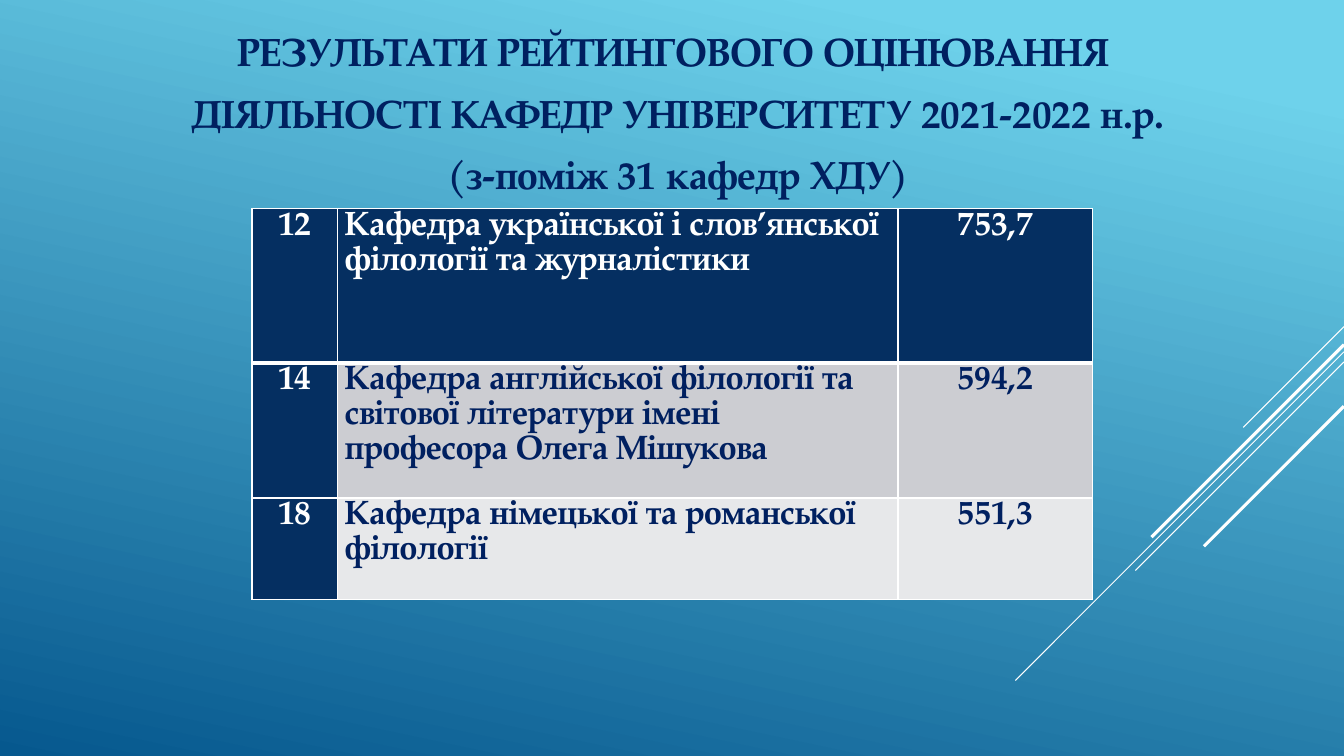
from typing import NamedTuple

from lxml import etree
from pptx import Presentation
from pptx.dml.color import RGBColor
from pptx.enum.shapes import MSO_CONNECTOR as Connector
from pptx.enum.text import PP_ALIGN as Align
from pptx.oxml.ns import qn
from pptx.util import Pt

FONT = "TeX Gyre Pagella"
NAVY, DARK, WHITE = "002060", "052F61", "FFFFFF"
WIDTH, HEIGHT = 960, 540


class Ray(NamedTuple):
    """A 45-degree line running down and left from the right slide edge."""
    y: float
    run: float
    weight: float


class Department(NamedTuple):
    place: str
    name: str
    score: str
    height: float
    fill: str
    color: str


RAYS = [
    Ray(233.3, 72, 0.75),
    Ray(251.3, 234.7, 0.75),
    Ray(258.5, 149, 0.75),
    Ray(246.2, 137.5, 2.25),
    Ray(290.2, 100, 2.25),
]
TITLE = [
    "РЕЗУЛЬТАТИ РЕЙТИНГОВОГО ОЦІНЮВАННЯ ",
    "ДІЯЛЬНОСТІ КАФЕДР УНІВЕРСИТЕТУ 2021-2022 н.р.",
    "(з-поміж 31 кафедр ХДУ)",
]
COLUMNS = [61.2, 400.3, 139]
DEPARTMENTS = [
    Department("12", "Кафедра української і слов’янської філології та журналістики",
               "753,7", 110.2, DARK, WHITE),
    Department("14", "Кафедра англійської філології та світової літератури імені "
               "професора Олега Мішукова", "594,2", 96.5, "CCCDD2", NAVY),
    Department("18", "Кафедра німецької та романської філології",
               "551,3", 72.7, "E7E8EA", NAVY),
]


def rgb(color: str) -> RGBColor:
    return RGBColor.from_string(color)


def write(p, text: str, *, size: float, color: str, align=Align.CENTER) -> None:
    p.alignment = align
    p.line_spacing = 1.07
    p.space_after = Pt(8)
    r = p.add_run()
    r.text = text
    r.font.name, r.font.size, r.font.bold = FONT, Pt(size), True
    r.font.color.rgb = rgb(color)


def paint_background(slide) -> None:
    fill = slide.background.fill
    fill.gradient()
    fill.gradient_angle = 258
    for stop, (position, color) in zip(fill.gradient_stops,
                                       [(0.1, "6ED2EB"), (1, "06588E")]):
        stop.position = position
        stop.color.rgb = rgb(color)


def draw_ray(slide, ray: Ray) -> None:
    line = slide.shapes.add_connector(Connector.STRAIGHT, Pt(WIDTH), Pt(ray.y),
                                      Pt(WIDTH - ray.run), Pt(ray.y + ray.run))
    line.line.color.rgb = rgb(WHITE)
    line.line.width = Pt(ray.weight)
    etree.SubElement(line._element.spPr, qn("a:effectLst"))


def draw_title(slide) -> None:
    tf = slide.shapes.add_textbox(Pt(87.5), Pt(13.7), Pt(794), Pt(175)).text_frame
    tf.word_wrap = True
    for i, text in enumerate(TITLE):
        p = tf.add_paragraph() if i else tf.paragraphs[0]
        write(p, text, size=28, color=NAVY)


def set_borders(cell, **weights: float) -> None:
    """Draw white cell borders; keywords are the sides L, R, T and B, in order."""
    tcPr = cell._tc.get_or_add_tcPr()
    for side, weight in weights.items():
        ln = etree.SubElement(tcPr, qn(f"a:ln{side}"), w=str(Pt(weight)))
        solid = etree.SubElement(ln, qn("a:solidFill"))
        etree.SubElement(solid, qn("a:srgbClr"), val=WHITE)


def draw_table(slide) -> None:
    table = slide.shapes.add_table(
        len(DEPARTMENTS), len(COLUMNS), Pt(180), Pt(149), Pt(sum(COLUMNS)),
        Pt(sum(d.height for d in DEPARTMENTS))).table
    table.first_row = table.horz_banding = False
    for column, width in zip(table.columns, COLUMNS):
        column.width = Pt(width)
    for i, dept in enumerate(DEPARTMENTS):
        table.rows[i].height = Pt(dept.height)
        for j, text in enumerate([dept.place, dept.name, dept.score]):
            cell = table.cell(i, j)
            cell.margin_left = cell.margin_right = Pt(5)
            cell.margin_top = cell.margin_bottom = 0
            set_borders(cell, L=1, R=1, T=3 if i == 1 else 1, B=3 if i == 0 else 1)
            cell.fill.solid()
            cell.fill.fore_color.rgb = rgb(dept.fill if j else DARK)
            write(cell.text_frame.paragraphs[0], text, size=24,
                  color=dept.color if j else WHITE,
                  align=Align.LEFT if j == 1 else Align.CENTER)


def main() -> None:
    prs = Presentation()
    prs.slide_width, prs.slide_height = Pt(WIDTH), Pt(HEIGHT)
    slide = prs.slides.add_slide(prs.slide_layouts[6])
    paint_background(slide)
    for ray in RAYS:
        draw_ray(slide, ray)
    draw_title(slide)
    draw_table(slide)
    prs.save("out.pptx")


if __name__ == "__main__":
    main()
